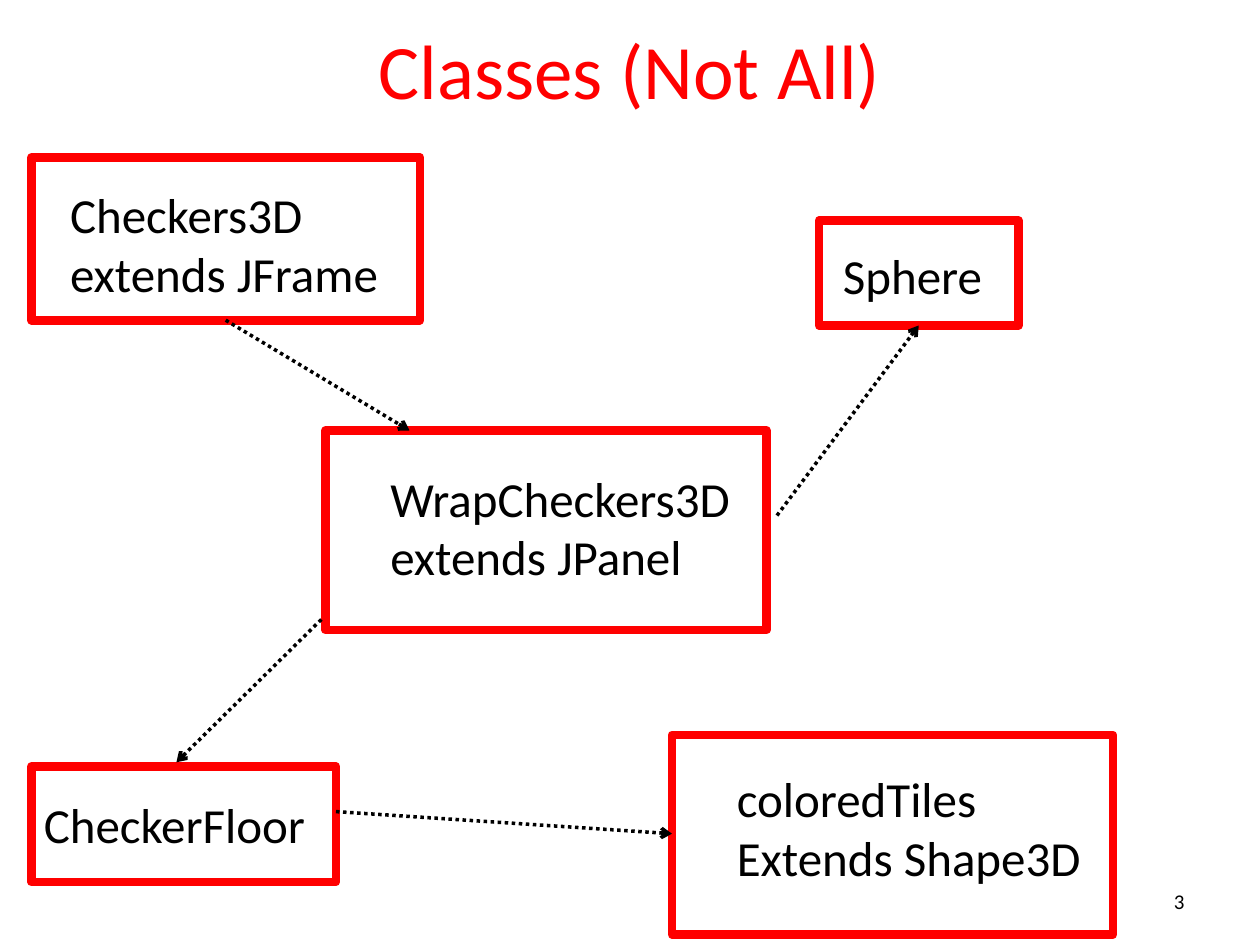
from dataclasses import dataclass

from lxml.etree import SubElement
from pptx import Presentation
from pptx.dml.color import RGBColor
from pptx.enum.dml import MSO_LINE
from pptx.enum.shapes import MSO_CONNECTOR, MSO_SHAPE
from pptx.enum.text import MSO_ANCHOR, MSO_AUTO_SIZE, PP_ALIGN
from pptx.oxml.ns import qn
from pptx.util import Inches, Pt


@dataclass(frozen=True)
class Theme:
    font: str = "Calibri"
    accent: RGBColor = RGBColor(0xFF, 0x00, 0x00)
    ink: RGBColor = RGBColor(0x00, 0x00, 0x00)
    title_size: int = 44
    class_size: int = 28
    number_size: int = 12
    box_line: int = 5
    arrow_line: int = 2


theme = Theme()
columns, rows = 120, 90

presentation = Presentation()
presentation.slide_width = Inches(10)
presentation.slide_height = Inches(7.5)
slide = presentation.slides.add_slide(presentation.slide_layouts[6])


def grid(*cells):
    extents = (presentation.slide_width / columns, presentation.slide_height / rows)
    return [round(cell * extents[index % 2]) for index, cell in enumerate(cells)]


def add_text(area, paragraphs, size, color, alignment=PP_ALIGN.LEFT):
    text_frame = slide.shapes.add_textbox(*grid(*area)).text_frame
    text_frame.word_wrap = True
    for index, lines in enumerate(paragraphs):
        paragraph = text_frame.add_paragraph() if index else text_frame.paragraphs[0]
        paragraph.alignment = alignment
        for line_index, line in enumerate(lines):
            if line_index:
                paragraph.add_line_break()
            run = paragraph.add_run()
            run.text = line
            run.font.name = theme.font
            run.font.size = Pt(size)
            run.font.color.rgb = color
    return text_frame


title = add_text((6, -1, 108, 15), [["Classes (Not All)"]],
                 theme.title_size, theme.accent, PP_ALIGN.CENTER)
number = add_text((86, 83.4, 28, 4.8), [["3"]],
                  theme.number_size, theme.ink, PP_ALIGN.RIGHT)
for text_frame in (title, number):
    text_frame.vertical_anchor = MSO_ANCHOR.MIDDLE

classes = [
    ((3, 15, 37, 15.5), (5.5, 17, 32, 12.5), [["Checkers3D"], ["extends JFrame"]]),
    ((31, 41, 42, 19), (36, 44, 36.2, 12.5), [["WrapCheckers3D"], ["extends JPanel"]]),
    ((3, 73, 29, 11), (3, 75.1, 27.6, 6.9), [["CheckerFloor"]]),
    ((64, 70, 42, 19), (69, 72.6, 35.5, 12.5), [["coloredTiles", "Extends Shape3D"]]),
    ((78, 21, 19, 10), (79.1, 22.8, 15.8, 6.9), [["Sphere"]]),
]
for box_area, text_area, paragraphs in classes:
    box = slide.shapes.add_shape(MSO_SHAPE.RECTANGLE, *grid(*box_area))
    box.shadow.inherit = False
    box.fill.background()
    box.line.color.rgb = theme.accent
    box.line.width = Pt(theme.box_line)
    label = add_text(text_area, paragraphs, theme.class_size, theme.ink)
    label.word_wrap = False
    label.auto_size = MSO_AUTO_SIZE.SHAPE_TO_FIT_TEXT

arrows = [
    (21.5, 30.5, 39, 41),
    (74, 49.1, 87.5, 31),
    (30.6, 59, 16.8, 72.6),
    (32, 77.3, 64, 79.4),
]
for ends in arrows:
    arrow = slide.shapes.add_connector(MSO_CONNECTOR.STRAIGHT, *grid(*ends))
    arrow.line.color.rgb = theme.ink
    arrow.line.width = Pt(theme.arrow_line)
    arrow.line.dash_style = MSO_LINE.ROUND_DOT
    properties = arrow.element.spPr
    SubElement(properties.find(qn("a:ln")), qn("a:tailEnd"), type="arrow")
    SubElement(properties, qn("a:effectLst"))

presentation.save("out.pptx")
